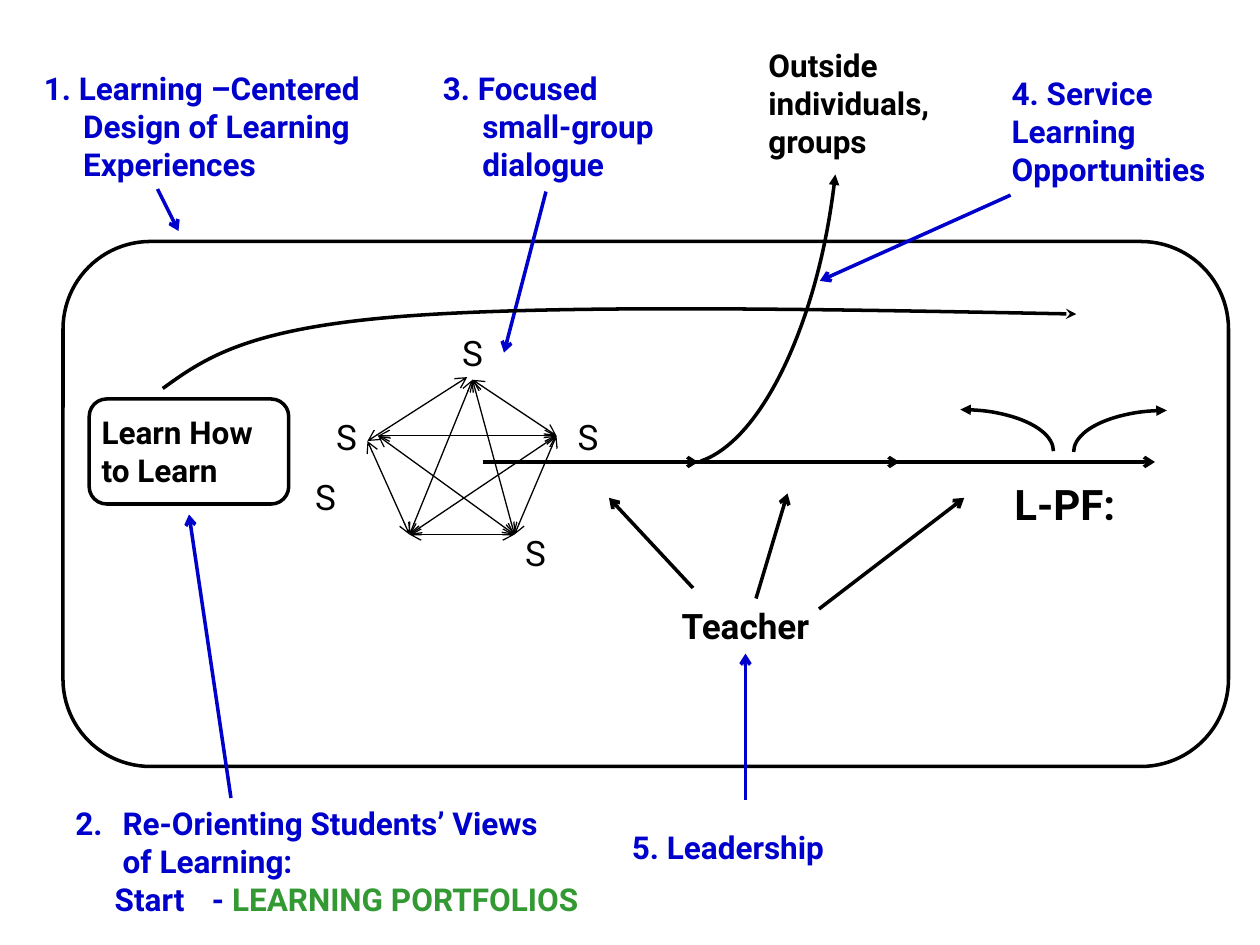
"""Builds the learning-centered course design diagram as one slide."""
from itertools import combinations

from lxml import etree
from pptx import Presentation
from pptx import util as u
from pptx.dml.color import RGBColor
from pptx.enum import shapes, text
from pptx.oxml.ns import qn

COLORS = {"ink": "000000", "note": "0000CC", "accent": "339933"}
FRAME_FORMAT = {"word_wrap": True, "auto_size": text.MSO_AUTO_SIZE.SHAPE_TO_FIT_TEXT}
NOTE = {"color": "note"}
STUDENT = {"size": 20, "bold": False, "align": text.PP_ALIGN.CENTER}
THREE_LINES = 72.7
ONE_LINE = 29


def points(*values):
    return [u.Pt(value) for value in values]


class Diagram:
    """Holds the style and the current slide."""

    def __init__(self, slide, font="Roboto", weight=2):
        self.slide, self.font, self.weight = slide, font, weight

    def stroke(self, item, color="ink", weight=None, head=None, tail=None):
        item.line.color.rgb = RGBColor.from_string(COLORS[color])
        item.line.width = u.Pt(weight or self.weight)
        outline = item.line._get_or_add_ln()
        for end, kind in (("a:headEnd", head), ("a:tailEnd", tail)):
            if kind:
                etree.SubElement(outline, qn(end), type=kind)

    def outline(self, kind, box, rotation=0, adjust=(), flip=False, **line):
        shape = self.slide.shapes.add_shape(kind, *points(*box))
        shape.shadow.inherit = False
        shape.fill.background()
        shape.rotation = rotation
        for index, value in enumerate(adjust):
            shape.adjustments[index] = value
        if flip:
            shape._element.spPr.find(qn("a:xfrm")).set("flipH", "1")
        self.stroke(shape, **line)

    def arrow(self, start, end, target=None, side=2, tail="arrow", **line):
        link = self.slide.shapes.add_connector(
            shapes.MSO_CONNECTOR.STRAIGHT, *points(*start, *end))
        if target is not None:
            link.end_connect(target, side)
        self.stroke(link, tail=tail, **line)
        etree.SubElement(link._element.spPr, qn("a:effectLst"))

    def curve(self, start, controls, **line):
        builder = self.slide.shapes.build_freeform(*points(*start))
        builder.add_line_segments([points(*spot) for spot in controls], close=False)
        shape = builder.convert_to_shape()
        shape.shadow.inherit = False
        shape.fill.background()
        self.stroke(shape, **line)
        segments = list(shape._element.iter(qn("a:lnTo")))
        for first in range(0, len(segments), 3):
            bezier = etree.SubElement(segments[first].getparent(), qn("a:cubicBezTo"))
            for segment in segments[first:first + 3]:
                bezier.append(segment[0])
                segment.getparent().remove(segment)

    def label(self, box, *paragraphs, size=18, bold=True, color="ink", align=None, hang=0):
        holder = self.slide.shapes.add_textbox(*points(*box))
        frame = holder.text_frame
        for name, value in FRAME_FORMAT.items():
            setattr(frame, name, value)
        for index, runs in enumerate(paragraphs):
            paragraph = frame.add_paragraph() if index else frame.paragraphs[0]
            paragraph.alignment = align
            if hang:
                self.indent(paragraph, hang, -hang)
            for words, tint in [(runs, color)] if isinstance(runs, str) else runs:
                run = paragraph.add_run()
                run.text = words
                style = {"name": self.font, "size": u.Pt(size), "bold": bold}
                for name, value in style.items():
                    setattr(run.font, name, value)
                run.font.color.rgb = RGBColor.from_string(COLORS[tint])
        return holder

    def indent(self, paragraph, left, first=0, number=None):
        properties = paragraph._p.get_or_add_pPr()
        properties.set("marL", str(u.Pt(left)))
        properties.set("indent", str(u.Pt(first)))
        if number:
            etree.SubElement(properties, qn("a:buFont"), typeface=self.font)
            etree.SubElement(properties, qn("a:buAutoNum"),
                             type="arabicPeriod", startAt=str(number))


def main():
    deck = Presentation()
    deck.slide_width, deck.slide_height = points(720, 540)
    diagram = Diagram(deck.slides.add_slide(deck.slide_layouts[6]))
    rounded, arc = shapes.MSO_SHAPE.ROUNDED_RECTANGLE, shapes.MSO_SHAPE.ARC

    diagram.outline(rounded, (51, 228, 114, 60))
    diagram.label((51, 232.5, 114, 51), "Learn How to Learn")
    diagram.outline(rounded, (36, 138, 666, 300))

    for begin, finish in ((276, 399), (391, 514), (476, 660)):
        diagram.arrow((begin, 264), (finish, 264))

    teacher = diagram.label((378, 342, 96, 31.5), "Teacher", size=20,
                            align=text.PP_ALIGN.CENTER)
    for start, end in (((396, 336), (348, 284.5)),
                       ((432, 342), (450, 282)),
                       ((468, 348), (551, 284.5))):
        diagram.arrow(start, end)

    diagram.label((18, 36, 216, THREE_LINES),
                  "1. Learning –Centered Design of Learning Experiences", hang=22.5, **NOTE)
    views = diagram.label((36, 456, 288, THREE_LINES),
                          "Re-Orienting Students’ Views of Learning:", "Start", **NOTE)
    heading, start_line = views.text_frame.paragraphs
    diagram.indent(heading, 27, -27, number=2)
    diagram.indent(start_line, 22.5)
    diagram.label((354, 469.5, 144, ONE_LINE), "5. Leadership", **NOTE)
    diagram.label((571, 39, 147, THREE_LINES),
                  "4. Service Learning Opportunities", **NOTE)
    diagram.label((246, 36, 156, THREE_LINES),
                  "3. Focused small-group dialogue", hang=22.5, **NOTE)
    for start, end, target in (((90, 108), (102, 132), None),
                               ((132, 456), (108, 294), None),
                               ((426, 457), (426, 373.5), teacher),
                               ((577.5, 111.5), (468.5, 160.5), None),
                               ((312, 109.5), (288, 201.5), None)):
        diagram.arrow(start, end, target, **NOTE)

    diagram.curve((93, 222), [(116.5, 205), (140.5, 188), (227.5, 181),
                              (314.5, 174), (464.5, 176.5), (615, 179.5)], tail="stealth")

    for left, top in ((180, 234), (168, 268), (318, 234), (288, 300), (252, 186)):
        diagram.label((left, top, 36, 31.5), "S", **STUDENT)
    top, right, low_right, low_left = (270, 217), (318, 249), (294, 305.5), (234, 305.5)
    outer_left, inner_left = (210, 252), (216, 249)
    dialogue = list(combinations((top, right, low_right, low_left), 2))
    dialogue += [(outer_left, (267, 215.5)), (outer_left, low_left),
                 (inner_left, right), (inner_left, low_right)]
    for start, end in dialogue:
        diagram.arrow(start, end, weight=0.75, head="arrow")

    diagram.outline(arc, (231, 19.5, 349, 144.5), rotation=96.3,
                    adjust=(162, 213.23), head="triangle")
    diagram.label((432, 23, 126, THREE_LINES), "Outside individuals, groups")
    diagram.outline(arc, (643, 205, 47.5, 106.5), rotation=270, tail="triangle")
    diagram.outline(arc, (525, 204.5, 47.5, 106.5), rotation=90, flip=True, tail="triangle")
    diagram.label((572.5, 270, 99, 36), "L-PF:", size=24)
    diagram.label((114, 499.5, 264, ONE_LINE),
                  [("- ", "note"), ("LEARNING PORTFOLIOS", "accent")])

    deck.save("out.pptx")


if __name__ == "__main__":
    main()
